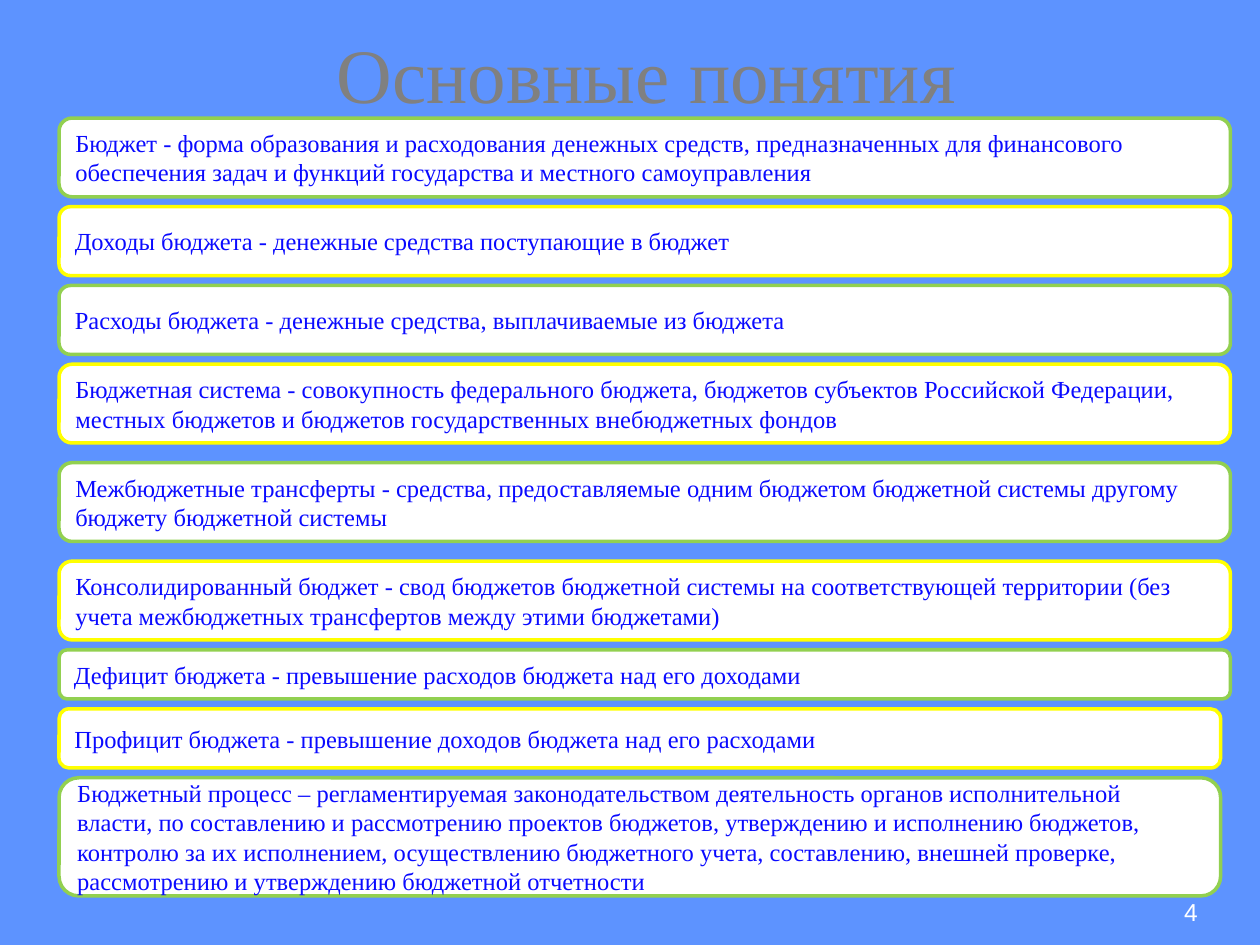
from pptx import Presentation
from pptx.dml.color import RGBColor
from pptx.enum.shapes import MSO_SHAPE as Shape
from pptx.enum.text import MSO_ANCHOR as Anchor, PP_ALIGN as Align
from pptx.util import Pt

BACK = RGBColor(0x5D, 0x93, 0xFF)
GREY = RGBColor(0x80, 0x80, 0x80)
WHITE = RGBColor(0xFF, 0xFF, 0xFF)
GREEN = RGBColor(0x92, 0xD0, 0x50)
YELLOW = RGBColor(0xFF, 0xFF, 0x00)
BLUE = RGBColor(0x0A, 0x0A, 0xFF)

SERIF = "Times New Roman"
SANS = "Arial"

LEFT, TOP = 33.75, 67.5
WIDE, SLIM = 669.38, 663.75
GAP = 5.63

# width, height, gap below, text
TERMS = [
    (WIDE, 45, GAP, "Бюджет - форма образования и расходования денежных средств, "
     "предназначенных для финансового обеспечения задач и функций государства "
     "и местного самоуправления"),
    (WIDE, 39.38, GAP, "Доходы бюджета - денежные средства поступающие в бюджет"),
    (WIDE, 39.38, GAP, "Расходы бюджета - денежные средства, выплачиваемые из бюджета"),
    (WIDE, 45, 2 * GAP, "Бюджетная система - совокупность федерального бюджета, "
     "бюджетов субъектов Российской Федерации, местных бюджетов и бюджетов "
     "государственных внебюджетных фондов"),
    (WIDE, 45, 2 * GAP, "Межбюджетные трансферты - средства, предоставляемые одним "
     "бюджетом бюджетной системы другому бюджету бюджетной системы"),
    (WIDE, 45, GAP, "Консолидированный бюджет - свод бюджетов бюджетной системы на "
     "соответствующей территории (без учета межбюджетных трансфертов между "
     "этими бюджетами)"),
    (WIDE, 28.13, GAP, "Дефицит бюджета - превышение расходов бюджета над его доходами"),
    (SLIM, 33.75, GAP, "Профицит бюджета - превышение доходов бюджета над его расходами"),
    (SLIM, 67.5, 0, "Бюджетный процесс – регламентируемая законодательством деятельность "
     "органов исполнительной власти, по составлению и рассмотрению проектов "
     "бюджетов, утверждению и исполнению бюджетов, контролю за их исполнением, "
     "осуществлению бюджетного учета, составлению, внешней проверке, "
     "рассмотрению и утверждению бюджетной отчетности"),
]


def write(shape, text, size, color, font=SERIF, align=Align.LEFT, anchor=Anchor.MIDDLE):
    frame = shape.text_frame
    frame.word_wrap = True
    frame.vertical_anchor = anchor
    para = frame.paragraphs[0]
    para.alignment = align
    run = para.add_run()
    run.text = text
    run.font.size = Pt(size)
    run.font.name = font
    run.font.color.rgb = color


def add_label(slide, box, text, size, color, **style):
    label = slide.shapes.add_textbox(*map(Pt, box))
    write(label, text, size, color, **style)


def add_card(slide, box, text, edge):
    card = slide.shapes.add_shape(Shape.ROUNDED_RECTANGLE, *map(Pt, box))
    card.shadow.inherit = False
    card.fill.solid()
    card.fill.fore_color.rgb = WHITE
    card.line.color.rgb = edge
    card.line.width = Pt(2)
    write(card, text, 14, BLUE)


def add_terms(slide):
    """Stack the cards downwards, with edges in alternating colours."""
    top = TOP
    for index, (width, height, gap, text) in enumerate(TERMS):
        edge = YELLOW if index % 2 else GREEN
        add_card(slide, (LEFT, top, width, height), text, edge)
        top += height + gap


def main():
    deck = Presentation()
    deck.slide_width, deck.slide_height = Pt(720), Pt(540)
    slide = deck.slides.add_slide(deck.slide_layouts[6])
    slide.background.fill.solid()
    slide.background.fill.fore_color.rgb = BACK

    add_label(slide, (36.5, 12.5, 666, 58), "Основные понятия", 44, GREY,
              align=Align.CENTER)
    add_label(slide, (669.5, 495.5, 32, 37.5), "4", 14, WHITE,
              font=SANS, anchor=Anchor.BOTTOM)
    add_terms(slide)
    deck.save("out.pptx")


if __name__ == "__main__":
    main()
